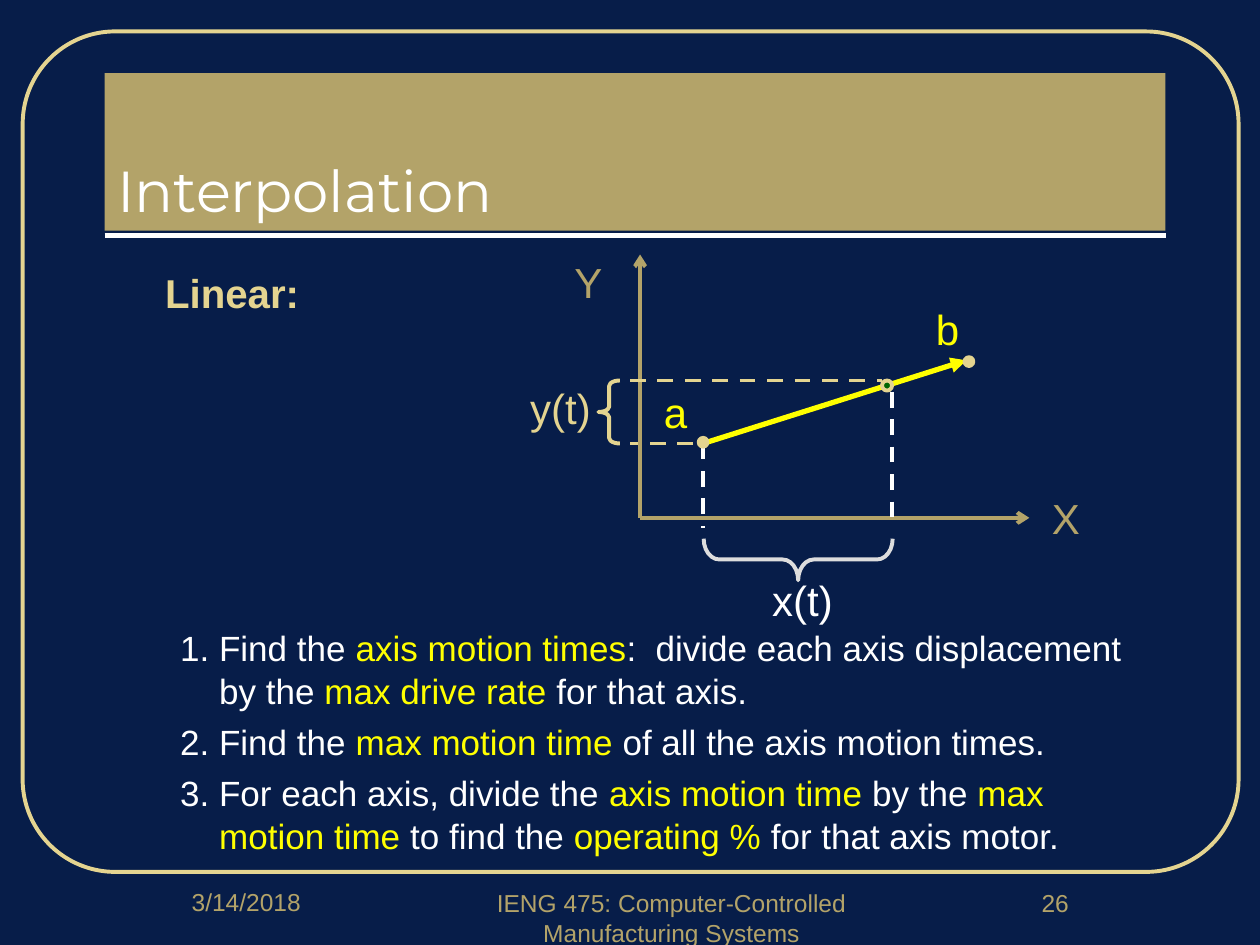
"""Build the slide on linear interpolation of axis motion."""
from lxml import etree
from pptx import Presentation
from pptx.dml.color import RGBColor
from pptx.enum.dml import MSO_LINE
from pptx.enum.shapes import MSO_CONNECTOR, MSO_SHAPE
from pptx.enum.text import MSO_ANCHOR, MSO_AUTO_SIZE, PP_ALIGN
from pptx.oxml.ns import qn
from pptx.util import Inches, Pt

STRAIGHT = MSO_CONNECTOR.STRAIGHT
DASH = MSO_LINE.DASH
ELLIPSE, BRACE, ROUNDED = MSO_SHAPE.OVAL, MSO_SHAPE.LEFT_BRACE, MSO_SHAPE.ROUNDED_RECTANGLE
LEFT, CENTER = PP_ALIGN.LEFT, PP_ALIGN.CENTER
NAVY, GOLD, SAND, WHITE, YELLOW = "071D49", "B3A369", "E4D490", "FFFFFF", "FFFF00"
GREEN, SILVER = "006600", "DDDDDD"


def color(hex_string):
    """Return the colour for a hex string."""
    return RGBColor.from_string(hex_string)


def style(run, size, hex_string, bold=False, font="Arial"):
    """Format the characters of one run."""
    run.font.name, run.font.size, run.font.bold = font, Pt(size), bold
    run.font.color.rgb = color(hex_string)


prs = Presentation()
prs.slide_width, prs.slide_height = Inches(10), Inches(7.5)
slide = prs.slides.add_slide(prs.slide_layouts[1])
slide.background.fill.solid()
slide.background.fill.fore_color.rgb = color(NAVY)
shapes = slide.shapes

title = shapes.title
title.left, title.top, title.width, title.height = map(Inches, (0.83, 0.58, 8.42, 1.25))
title.fill.solid()
title.fill.fore_color.rgb = color(GOLD)
title.text_frame.text = "Interpolation"
title.text_frame.vertical_anchor = MSO_ANCHOR.BOTTOM
title.text_frame.auto_size = MSO_AUTO_SIZE.NONE
title.text_frame.paragraphs[0].alignment = LEFT
style(title.text_frame.paragraphs[0].runs[0], 33, WHITE, font="Montserrat")

body = slide.placeholders[1]
body.left, body.top, body.width, body.height = map(Inches, (0.83, 2.08, 8.42, 4.42))
body_text = body.text_frame
body_text.auto_size = MSO_AUTO_SIZE.NONE
body_text.text = "Linear:"
heading = body_text.paragraphs[0]
heading.space_before = Pt(3)
style(heading.runs[0], 23, SAND, bold=True)

steps = [
    ["1. Find the ", "axis motion times", ":  divide each axis displacement by the ",
     "max drive rate", " for that axis."],
    ["2. Find the ", "max motion time", " of all the axis motion times."],
    ["3. For each axis, divide the ", "axis motion time", " by the", " max motion time ",
     "to find the ", "operating % ", "for that axis motor."],
]
for number, parts in enumerate(steps):
    step = body_text.add_paragraph()
    step.level = 1
    step.line_spacing = 1.04
    step.space_before = Pt(4 if number else 176)
    for position, part in enumerate(parts):
        run = step.add_run()
        run.text = part
        style(run, 20, YELLOW if position % 2 else WHITE)

for paragraph in body_text.paragraphs:
    margin, indent = (0.81, -0.31) if paragraph.level else (0.38, 0)
    properties = paragraph._p.get_or_add_pPr()
    properties.set("marL", str(Inches(margin)))
    properties.set("indent", str(Inches(indent)))
    etree.SubElement(properties, qn("a:buNone"))

labels = [
    ("3/14/2018", 0.83, 6.99, 2.25, 14, GOLD, CENTER),
    ("IENG 475: Computer-Controlled Manufacturing Systems", 3.58, 7, 3.5, 14, GOLD, CENTER),
    ("26", 7.5, 7, 1.75, 14, GOLD, CENTER),
    ("a", 5.17, 3.02, 0.42, 24, YELLOW, LEFT),
    ("b", 7.33, 2.36, 0.42, 24, YELLOW, LEFT),
    ("X", 8.25, 3.86, 0.42, 24, GOLD, LEFT),
    ("Y", 4.46, 1.99, 0.42, 24, GOLD, LEFT),
    ("x(t)", 6.03, 4.51, 0.92, 24, WHITE, LEFT),
    ("y(t)", 4.11, 2.99, 0.75, 24, SAND, LEFT),
]
for text, left, top, width, size, hue, alignment in labels:
    label = shapes.add_textbox(Inches(left), Inches(top), Inches(width), Inches(0.5))
    label.text_frame.word_wrap = True
    label.text_frame.text = text
    label.text_frame.paragraphs[0].alignment = alignment
    style(label.text_frame.paragraphs[0].runs[0], size, hue)

lines = [
    (0.83, 1.87, 9.25, 1.87, WHITE, 3, None, None),
    (5.08, 4.11, 5.08, 2.02, GOLD, 2.25, None, "arrow"),
    (5.08, 4.11, 8.17, 4.11, GOLD, 2.25, None, "arrow"),
    (5.58, 3.52, 7.67, 2.86, YELLOW, 3, None, "triangle"),
    (5.58, 3.52, 5.58, 4.19, WHITE, 2.25, DASH, None),
    (7.08, 3.11, 7.08, 4.19, WHITE, 2.25, DASH, None),
    (5, 3.02, 7, 3.02, SAND, 2.25, DASH, None),
    (5.5, 3.52, 5, 3.52, SAND, 2.25, DASH, None),
]
for x1, y1, x2, y2, hue, weight, dash, arrowhead in lines:
    segment = shapes.add_connector(STRAIGHT, Inches(x1), Inches(y1), Inches(x2), Inches(y2))
    segment.line.color.rgb = color(hue)
    segment.line.width = Pt(weight)
    if dash:
        segment.line.dash_style = dash
    if arrowhead:
        etree.SubElement(segment.line._get_or_add_ln(), qn("a:tailEnd"), type=arrowhead)
    etree.SubElement(segment._element.spPr, qn("a:effectLst"))

outlines = [
    (ROUNDED, 0.18, 0.25, 9.65, 6.67, None, SAND, 2.25, [0.11], 0),
    (BRACE, 4.75, 3.02, 0.17, 0.5, None, SAND, 2.25, [0.25, 0.5], 0),
    (BRACE, 6.17, 3.69, 0.33, 1.5, None, SILVER, 2.25, [0.375, 0.5], 270),
    (ELLIPSE, 7.65, 2.83, 0.08, 0.08, SAND, SAND, 1.5, [], 0),
    (ELLIPSE, 7, 3.02, 0.08, 0.08, GREEN, SAND, 2.25, [], 0),
    (ELLIPSE, 5.54, 3.47, 0.08, 0.08, SAND, SAND, 1.5, [], 0),
]
for kind, left, top, width, height, fill, hue, weight, adjustments, rotation in outlines:
    mark = shapes.add_shape(kind, Inches(left), Inches(top), Inches(width), Inches(height))
    mark.shadow.inherit = False
    mark.rotation = rotation
    for index, value in enumerate(adjustments):
        mark.adjustments[index] = value
    if fill:
        mark.fill.solid()
        mark.fill.fore_color.rgb = color(fill)
    else:
        mark.fill.background()
    mark.line.color.rgb = color(hue)
    mark.line.width = Pt(weight)

prs.save("out.pptx")
